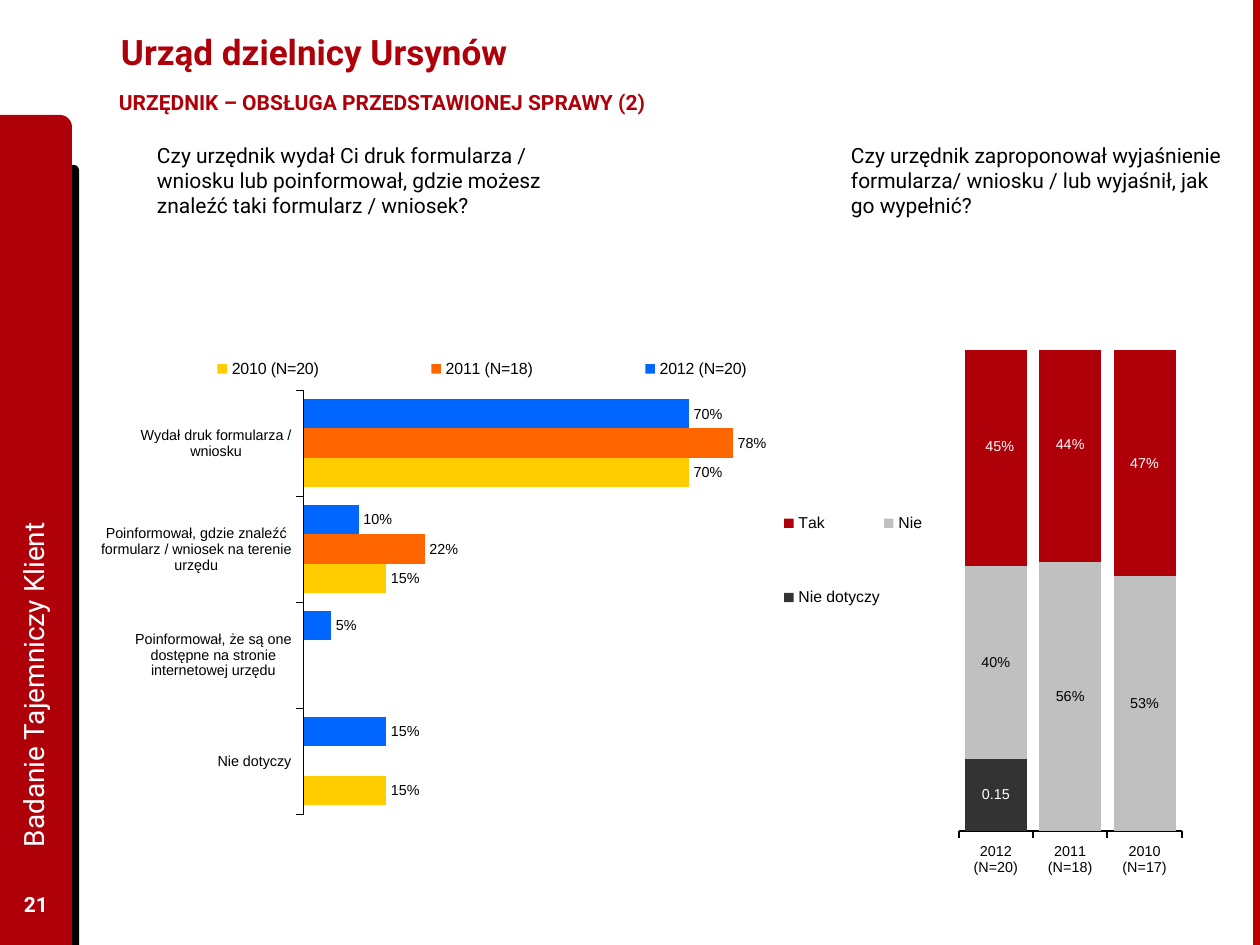
from dataclasses import dataclass
from typing import Optional

from lxml import etree
from pptx import Presentation
from pptx.chart.data import CategoryChartData
from pptx.dml.color import RGBColor
from pptx.enum.chart import (XL_CHART_TYPE, XL_LABEL_POSITION, XL_LEGEND_POSITION,
                             XL_TICK_LABEL_POSITION, XL_TICK_MARK)
from pptx.enum.shapes import MSO_SHAPE
from pptx.enum.text import MSO_ANCHOR, PP_ALIGN
from pptx.oxml.ns import qn
from pptx.util import Emu, Pt

BARS, STACK = XL_CHART_TYPE.BAR_CLUSTERED, XL_CHART_TYPE.COLUMN_STACKED_100
OUT_END, MID = XL_LABEL_POSITION.OUTSIDE_END, XL_LABEL_POSITION.CENTER
LEFT, RIGHT = XL_LEGEND_POSITION.LEFT, XL_LEGEND_POSITION.RIGHT
LOW, TICK = XL_TICK_LABEL_POSITION.LOW, XL_TICK_MARK.OUTSIDE
RECT, ROUND = MSO_SHAPE.RECTANGLE, MSO_SHAPE.ROUND_1_RECTANGLE
TOP, MIDDLE = MSO_ANCHOR.TOP, MSO_ANCHOR.MIDDLE
START, CENTRE = PP_ALIGN.LEFT, PP_ALIGN.CENTER

SCALE = 914400 / 126
RED, BLACK, WHITE = "AF000A", "000000", "FFFFFF"
Box = tuple[int, int, int, int]
Frame = tuple[float, float, float, float]


@dataclass
class Panel:
    kind: MSO_SHAPE
    box: Box
    fill: str


@dataclass
class Label:
    text: str
    box: Box
    size: int
    color: str
    bold: bool = False
    anchor: MSO_ANCHOR = MIDDLE
    align: PP_ALIGN = START
    turn: int = 0
    inset: int = 13
    wrap: bool = True


@dataclass
class Series:
    name: str
    vals: list[Optional[float]]
    fill: str
    ink: str = BLACK
    form: str = "0%"


@dataclass
class Graph:
    kind: XL_CHART_TYPE
    box: Box
    cats: list[str]
    series: list[Series]
    gap: int
    overlap: int
    size: float
    line: float
    plot: Frame
    side: XL_LEGEND_POSITION
    key: Frame
    key_size: float
    place: XL_LABEL_POSITION


PANELS = [
    Panel(ROUND, (49, 165, 30, 780), BLACK),
    Panel(ROUND, (0, 115, 72, 830), RED),
    Panel(RECT, (1253, 0, 7, 945), "BD0000"),
]
LABELS = [
    Label("Urząd dzielnicy Ursynów", (108, 6, 979, 91), 20, RED, True),
    Label("Badanie Tajemniczy Klient", (-330, 465, 726, 64), 16, WHITE, turn=270),
    Label("21", (0, 879, 72, 50), 12, WHITE, True, align=CENTRE),
    Label("URZĘDNIK – OBSŁUGA PRZEDSTAWIONEJ SPRAWY (2)", (94, 83, 580, 42),
          12, RED, True, TOP, inset=25, wrap=False),
    Label("Czy urzędnik zaproponował wyjaśnienie formularza/ wniosku / lub "
          "wyjaśnił, jak go wypełnić?", (838, 136, 397, 89), 12, BLACK, anchor=TOP),
    Label("Czy urzędnik wydał Ci druk formularza / wniosku lub poinformował, "
          "gdzie możesz znaleźć taki formularz / wniosek?",
          (144, 136, 465, 89), 12, BLACK, anchor=TOP),
]
HELP = Graph(
    STACK, (780, 314, 406, 601), ["2012 (N=20)", "2011 (N=18)", "2010 (N=17)"],
    [Series("Nie dotyczy", [0.15, None, None], "333333", WHITE, "General"),
     Series("Nie", [0.4, 0.56, 0.53], "C0C0C0"),
     Series("Tak", [0.45, 0.44, 0.47], RED, WHITE)],
    20, 100, 8.2, 1.17, (0.44, 0.06, 0.55, 0.8), LEFT, (0, 0.24, 0.36, 0.34), 9, MID)
FORM = Graph(
    BARS, (101, 338, 753, 476),
    ["Wydał druk formularza / wniosku",
     "Poinformował, gdzie znaleźć formularz / wniosek na terenie urzędu",
     "Poinformował, że są one dostępne na stronie internetowej urzędu",
     "Nie dotyczy"],
    [Series("2012 (N=20)", [0.7, 0.1, 0.05, 0.15], "0066FF"),
     Series("2011 (N=18)", [0.78, 0.22, None, None], "FF6600"),
     Series("2010 (N=20)", [0.7, 0.15, None, 0.15], "FFCC00")],
    60, 0, 8.3, 0.25, (0.26, 0.11, 0.74, 0.89), RIGHT, (0, 0.03, 1, 0.07), 9.2, OUT_END)


def px(num: int) -> Emu:
    return Emu(round(num * SCALE))


def rgb(code: str) -> RGBColor:
    return RGBColor.from_string(code)


def style(font, size: float, color: str, face: str = "Arial", bold: bool = False) -> None:
    font.name, font.size, font.bold = face, Pt(size), bold
    font.color.rgb = rgb(color)


def draw_panel(slide, item: Panel) -> None:
    shape = slide.shapes.add_shape(item.kind, *map(px, item.box))
    shape.shadow.inherit = False
    shape.fill.solid()
    shape.fill.fore_color.rgb = rgb(item.fill)
    shape.line.fill.background()


def draw_label(slide, item: Label) -> None:
    shape = slide.shapes.add_textbox(*map(px, item.box))
    shape.rotation = item.turn
    frame = shape.text_frame
    frame.word_wrap, frame.vertical_anchor = item.wrap, item.anchor
    frame.margin_left = frame.margin_right = px(item.inset)
    para = frame.paragraphs[0]
    para.alignment = item.align
    run = para.add_run()
    run.text = item.text
    style(run.font, item.size, item.color, "Roboto", item.bold)


def make_layout(**parts) -> etree.Element:
    """Return a c:layout element holding the given manual settings."""
    root = etree.Element(qn("c:layout"))
    manual = etree.SubElement(root, qn("c:manualLayout"))
    for name, val in parts.items():
        etree.SubElement(manual, qn(f"c:{name}")).set("val", str(val))
    return root


def edge_layout(frame: Frame, **extra) -> etree.Element:
    x, y, w, h = frame
    return make_layout(**extra, xMode="edge", yMode="edge", x=x, y=y, w=w, h=h)


def draw_graph(slide, item: Graph):
    data = CategoryChartData(number_format="0%")
    data.categories = item.cats
    for row in item.series:
        data.add_series(row.name, row.vals)
    chart = slide.shapes.add_chart(item.kind, *map(px, item.box), data).chart
    chart.has_title = False
    style(chart.font, item.size, BLACK)

    area = chart.plots[0]
    area.gap_width, area.overlap, area.vary_by_categories = item.gap, item.overlap, False
    for row, ser in zip(item.series, area.series):
        ser.format.fill.solid()
        ser.format.fill.fore_color.rgb = rgb(row.fill)
        ser.invert_if_negative = False
        tags = ser.data_labels
        tags.show_value, tags.position = True, item.place
        tags.number_format, tags.number_format_is_linked = row.form, False
        style(tags.font, item.size, row.ink)

    axis = chart.category_axis
    axis.major_tick_mark, axis.tick_label_position = TICK, LOW
    axis.format.line.color.rgb = rgb(BLACK)
    axis.format.line.width = Pt(item.line)
    style(axis.tick_labels.font, item.size, BLACK)
    scale = chart.value_axis
    scale.visible = scale.has_major_gridlines = False
    scale.minimum_scale, scale.maximum_scale = 0, 1

    chart.has_legend = True
    key = chart.legend
    key.position, key.include_in_layout = item.side, False
    style(key.font, item.key_size, BLACK)
    for old in key._element.findall(qn("c:layout")):
        key._element.remove(old)
    key._element.find(qn("c:legendPos")).addnext(edge_layout(item.key))
    plot = chart._chartSpace.chart.plotArea
    for old in plot.findall(qn("c:layout")):
        plot.remove(old)
    plot.insert(0, edge_layout(item.plot, layoutTarget="inner"))
    return chart


def shift_tag(ser, spot: int, x: float, y: float, size: float) -> None:
    """Move one white percent label away from the middle of its bar."""
    tag = ser.points[spot].data_label
    style(tag.font, size, WHITE)
    tag.position = MID
    node = ser._element.xpath(f".//c:dLbl[c:idx/@val='{spot}']")[0]
    form = etree.Element(qn("c:numFmt"), formatCode="0%", sourceLinked="0")
    mark = node.find(qn("c:idx"))
    mark.addnext(form)
    mark.addnext(make_layout(x=x, y=y))


def main() -> None:
    deck = Presentation()
    deck.slide_width, deck.slide_height = px(1260), px(945)
    slide = deck.slides.add_slide(deck.slide_layouts[6])
    for panel in PANELS:
        draw_panel(slide, panel)
    for label in LABELS:
        draw_label(slide, label)
    yes = draw_graph(slide, HELP).plots[0].series[2]
    for spot, x in enumerate((0.01, 0)):
        shift_tag(yes, spot, x, -0.02, HELP.size)
    draw_graph(slide, FORM).category_axis.reverse_order = True
    deck.save("out.pptx")


if __name__ == "__main__":
    main()
